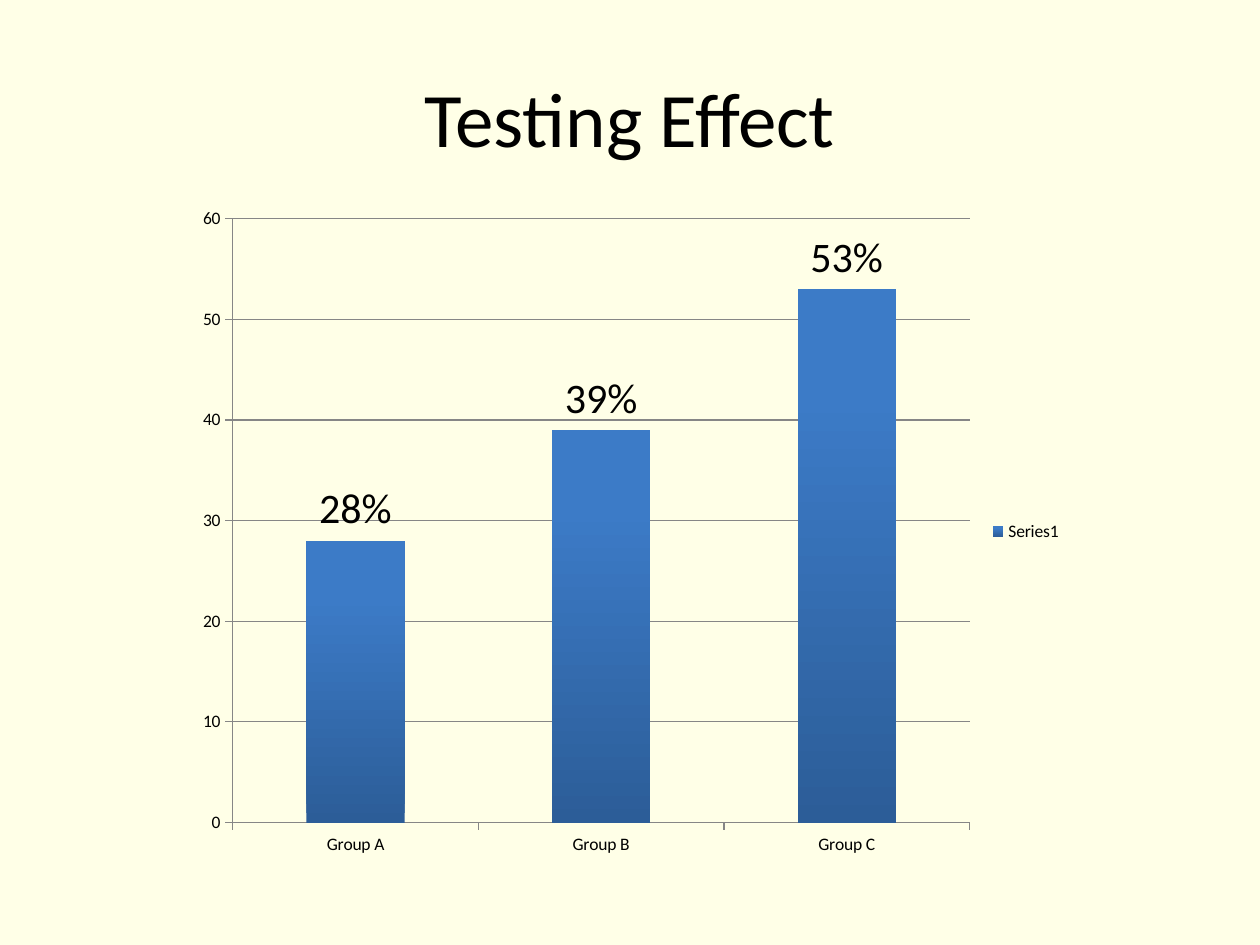
"""Build a slide with a column chart of the testing effect in three groups."""
from pptx import Presentation
from pptx.chart.data import CategoryChartData
from pptx.dml.color import RGBColor
from pptx.enum.chart import XL_CHART_TYPE, XL_LABEL_POSITION, XL_LEGEND_POSITION, XL_TICK_MARK
from pptx.enum.text import MSO_ANCHOR, PP_ALIGN
from pptx.util import Inches, Pt

COLUMNS = XL_CHART_TYPE.COLUMN_CLUSTERED
ABOVE = XL_LABEL_POSITION.OUTSIDE_END
RIGHT = XL_LEGEND_POSITION.RIGHT
OUTSIDE = XL_TICK_MARK.OUTSIDE
NO_TICK = XL_TICK_MARK.NONE
MIDDLE = MSO_ANCHOR.MIDDLE
CENTER = PP_ALIGN.CENTER


def color(value):
    """Return the colour for a hex string."""
    return RGBColor.from_string(value)


def style(target, **values):
    """Set each given attribute on the target."""
    for name, value in values.items():
        setattr(target, name, value)


deck = Presentation()
style(deck, slide_width=Inches(10), slide_height=Inches(7.5))
page = deck.slides.add_slide(deck.slide_layouts[5])
page.background.fill.solid()
page.background.fill.fore_color.rgb = color("FFFFE7")

title = page.shapes.title
style(title, left=Inches(0.5), top=Inches(0.3), width=Inches(9), height=Inches(1.25))
title.text_frame.text = "Testing Effect"
title.text_frame.vertical_anchor = MIDDLE
para = title.text_frame.paragraphs[0]
para.alignment = CENTER
style(para.runs[0].font, name="Calibri", size=Pt(44))
para.runs[0].font.color.rgb = color("000000")

scores = CategoryChartData(number_format="General")
scores.categories = ["Group A", "Group B", "Group C"]
scores.add_series("Series1", [28, 39, 53])
chart = page.shapes.add_chart(
    COLUMNS, Inches(1.47), Inches(1.55), Inches(7.06), Inches(5.34), scores
).chart
style(chart, has_title=False, has_legend=True)
style(chart.font, name="Calibri", size=Pt(10))
chart.font.color.rgb = color("000000")
style(chart.legend, position=RIGHT, include_in_layout=False)

style(chart.value_axis, minimum_scale=0, maximum_scale=60, major_unit=10,
      has_major_gridlines=True)
for axis in (chart.category_axis, chart.value_axis):
    style(axis, major_tick_mark=OUTSIDE, minor_tick_mark=NO_TICK)
for line in (chart.category_axis.format.line, chart.value_axis.format.line,
             chart.value_axis.major_gridlines.format.line):
    line.color.rgb = color("868686")
    line.width = Pt(0.75)

plot = chart.plots[0]
style(plot, gap_width=150, vary_by_categories=False, has_data_labels=True)
style(plot.data_labels, show_value=True, position=ABOVE,
      number_format='0"%"', number_format_is_linked=False)
style(plot.data_labels.font, name="Calibri", size=Pt(24))
plot.data_labels.font.color.rgb = color("000000")

column_fill = plot.series[0].format.fill
column_fill.gradient()
column_fill.gradient_angle = 90
for stop, (position, shade) in zip(column_fill.gradient_stops,
                                   [(0, "2C5D98"), (0.8, "3C7BC7")]):
    stop.position = position
    stop.color.rgb = color(shade)

deck.save("out.pptx")
